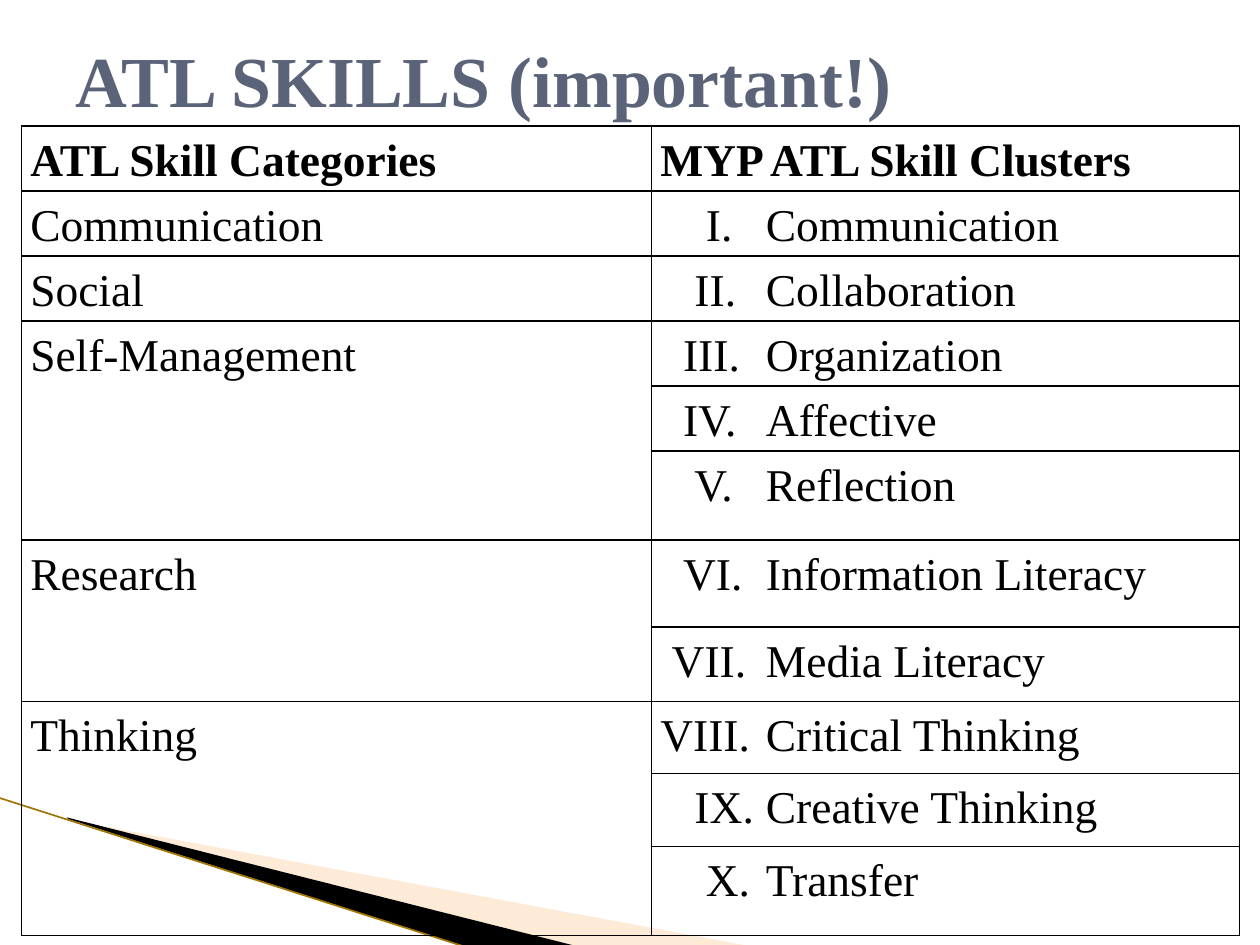
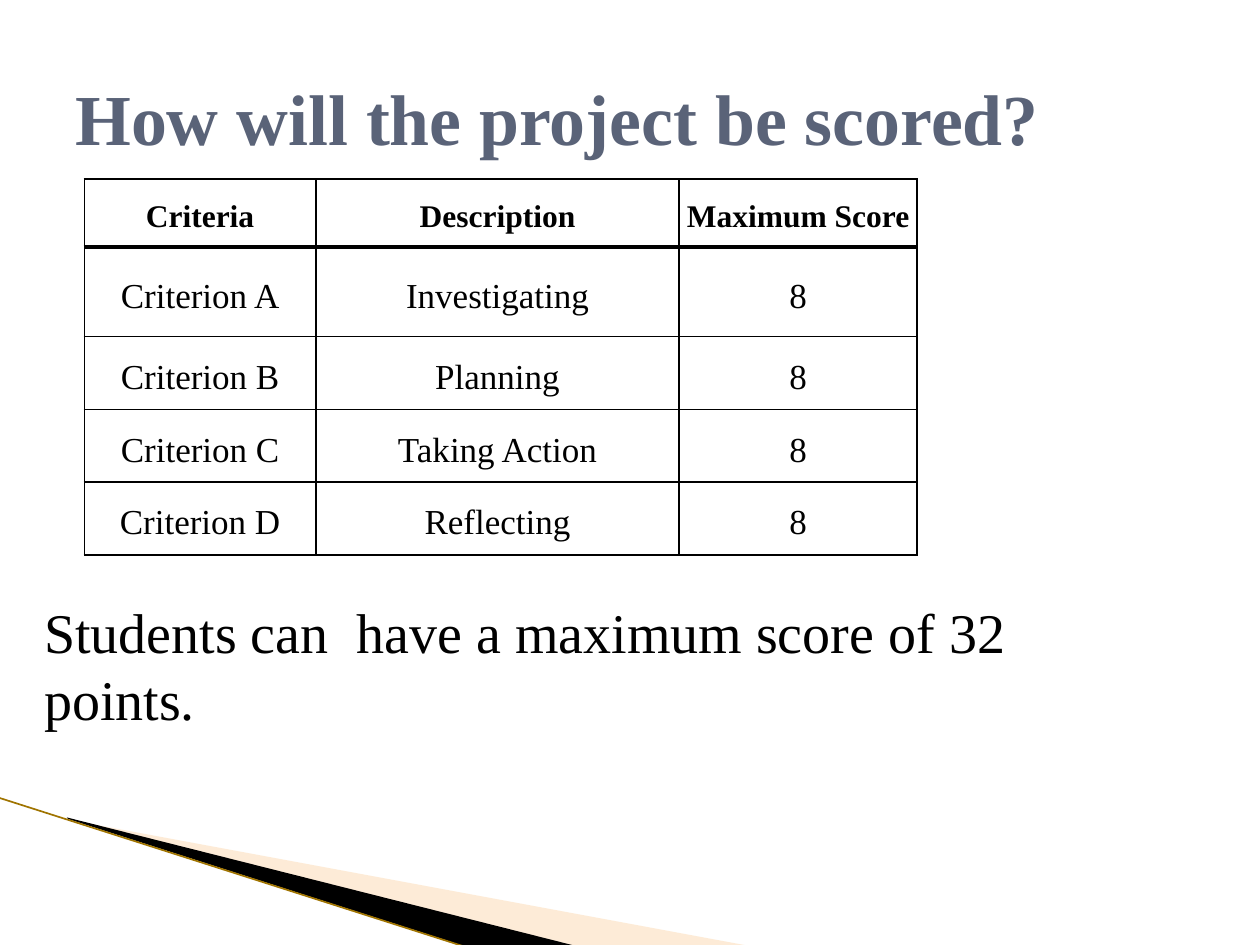
from lxml import etree
from pptx import Presentation
from pptx.dml.color import RGBColor
from pptx.enum.shapes import MSO_CONNECTOR
from pptx.enum.text import MSO_ANCHOR, PP_ALIGN
from pptx.oxml.ns import qn
from pptx.util import Cm, Pt

STRAIGHT = MSO_CONNECTOR.STRAIGHT
TOP, MIDDLE = MSO_ANCHOR.TOP, MSO_ANCHOR.MIDDLE
LEFT, CENTER = PP_ALIGN.LEFT, PP_ALIGN.CENTER

FONT = "Times New Roman"
BLACK, WHITE, SLATE = "000000", "FFFFFF", "5A6378"
PEACH, GOLD = "FCCF9B", "A07400"
TABLE_SPACING = 1.19
NUMERAL_STEP, CLUSTER_START = 0.23, 2.13

# Category, then its clusters: numeral, indent steps, name, row height
SKILLS = [
    ("Communication", [("I.", 4, "Communication", 1.27)]),
    ("Social", [("II.", 3, "Collaboration", 1.27)]),
    ("Self-Management", [("III.", 2, "Organization", 1.27),
                         ("IV.", 2, "Affective", 1.27),
                         ("V.", 3, "Reflection", 1.8)]),
    ("Research", [("VI.", 2, "Information Literacy", 1.75),
                  ("VII.", 1, "Media Literacy", 1.5)]),
    ("Thinking", [("VIII.", 0, "Critical Thinking", 1.45),
                  ("IX.", 3, "Creative Thinking", 1.47),
                  ("X.", 4, "Transfer", 1.8)]),
]
CRITERIA = ["Investigating", "Planning", "Taking Action", "Reflecting"]


def rgb(color):
    return RGBColor.from_string(color)


def style_text(p, size, color=BLACK, bold=False):
    for r in p.runs:
        r.font.name = FONT
        r.font.size = Pt(size)
        r.font.bold = bold
        r.font.color.rgb = rgb(color)


def add_text(slide, text, left, top, size, color=BLACK, bold=False):
    sp = slide.shapes.add_textbox(Cm(left), Cm(top), Cm(22.86), Cm(3.18))
    tf = sp.text_frame
    tf.word_wrap = True
    tf.vertical_anchor = MIDDLE
    tf.text = text
    style_text(tf.paragraphs[0], size, color, bold)


def add_title(slide, text, top):
    add_text(slide, text, 1.27, top, 41, SLATE, True)


def add_wedge(slide, points, color, opacity=100):
    corners = [(Cm(x), Cm(y)) for x, y in points]
    builder = slide.shapes.build_freeform(*corners[0])
    builder.add_line_segments(corners[1:])
    sp = builder.convert_to_shape()
    sp.shadow.inherit = False
    sp.fill.solid()
    sp.fill.fore_color.rgb = rgb(color)
    sp.line.fill.background()
    if opacity < 100:
        clr = sp.fill._xPr.find(".//" + qn("a:srgbClr"))
        etree.SubElement(clr, qn("a:alpha"), val=str(opacity * 1000))


def add_corner_band(slide):
    add_wedge(slide, [(1.4, 16.53), (15.11, 19.07), (11.58, 19.07), (1.4, 16.51)],
              PEACH, 40)
    add_wedge(slide, [(1.35, 16.48), (11.61, 19.07), (9.45, 19.1), (1.37, 16.51)],
              BLACK)
    line = slide.shapes.add_connector(STRAIGHT, Cm(-0.03), Cm(16.08),
                                      Cm(9.42), Cm(19.1))
    line.line.color.rgb = rgb(GOLD)
    line.line.width = Pt(0.95)
    etree.SubElement(line._element.spPr, qn("a:effectLst"))


def set_borders(cell, top=1, bottom=1):
    """Draw black cell edges, with widths in points."""
    tc_pr = cell._tc.get_or_add_tcPr()
    for side, width in (("L", 1), ("R", 1), ("T", top), ("B", bottom)):
        ln = etree.SubElement(tc_pr, qn("a:ln" + side), w=str(Pt(width)))
        fill = etree.SubElement(ln, qn("a:solidFill"))
        etree.SubElement(fill, qn("a:srgbClr"), val=BLACK)


def add_grid(slide, left, top, widths, heights):
    frame = slide.shapes.add_table(len(heights), len(widths), Cm(left), Cm(top),
                                   Cm(sum(widths)), Cm(sum(heights)))
    table = frame.table
    table.first_row = table.horz_banding = False
    for column, width in zip(table.columns, widths):
        column.width = Cm(width)
    for row, height in zip(table.rows, heights):
        row.height = Cm(height)
    return table


def set_cell(cell, text, size, bold=False, align=LEFT, anchor=TOP):
    cell.text = text
    cell.vertical_anchor = anchor
    p = cell.text_frame.paragraphs[0]
    p.alignment = align
    p.line_spacing = TABLE_SPACING
    style_text(p, size, bold=bold)
    return p


def set_margins(cell, side, top=0):
    cell.margin_left = cell.margin_right = Cm(side)
    cell.margin_top, cell.margin_bottom = Cm(top), 0


def add_skills_table(slide):
    heights = [1.27] + [c[3] for _, clusters in SKILLS for c in clusters]
    table = add_grid(slide, 0.43, 2.54, [12.7, 11.86], heights)
    for cell in table.iter_cells():
        set_margins(cell, 0.18)
        set_borders(cell)
        cell.fill.background()
    set_cell(table.cell(0, 0), "ATL Skill Categories", 26, True)
    set_cell(table.cell(0, 1), "MYP ATL Skill Clusters", 26, True)
    row = 1
    for category, clusters in SKILLS:
        first = table.cell(row, 0)
        if len(clusters) > 1:
            first.merge(table.cell(row + len(clusters) - 1, 0))
        set_cell(first, category, 26)
        for numeral, steps, name, _ in clusters:
            p = set_cell(table.cell(row, 1), f"{numeral}\t{name}", 26)
            p_pr = p._p.get_or_add_pPr()
            p_pr.set("marL", str(Cm(CLUSTER_START)))
            p_pr.set("indent", str(Cm(steps * NUMERAL_STEP - CLUSTER_START)))
            row += 1


def add_score_table(slide):
    rows = [("Criteria", "Description", "Maximum Score")]
    rows += [(f"Criterion {letter}", name, "8")
             for letter, name in zip("ABCD", CRITERIA)]
    table = add_grid(slide, 1.7, 3.61, [4.67, 7.32, 4.8],
                     [1.37, 1.8, 1.47, 1.47, 1.47])
    for i, values in enumerate(rows):
        header = i == 0
        for j, value in enumerate(values):
            cell = table.cell(i, j)
            set_margins(cell, 0.03, 0.03)
            set_borders(cell, top=2.25 if i == 1 else 1,
                        bottom=2.25 if header else 1)
            cell.fill.solid()
            cell.fill.fore_color.rgb = rgb(WHITE)
            set_cell(cell, value, 18 if header else 20, header, CENTER, MIDDLE)


def add_slide(prs):
    slide = prs.slides.add_slide(prs.slide_layouts[6])
    add_corner_band(slide)
    return slide


def main():
    prs = Presentation()
    prs.slide_width, prs.slide_height = Cm(25.4), Cm(19.05)

    skills = add_slide(prs)
    add_title(skills, "ATL SKILLS (important!)", 0)
    add_skills_table(skills)

    scoring = add_slide(prs)
    add_score_table(scoring)
    add_title(scoring, "How will the project be scored?", 0.76)
    add_text(scoring, "Students can  have a maximum score of 32 points.",
             0.64, 11.81, 32)

    prs.save("out.pptx")


if __name__ == "__main__":
    main()
